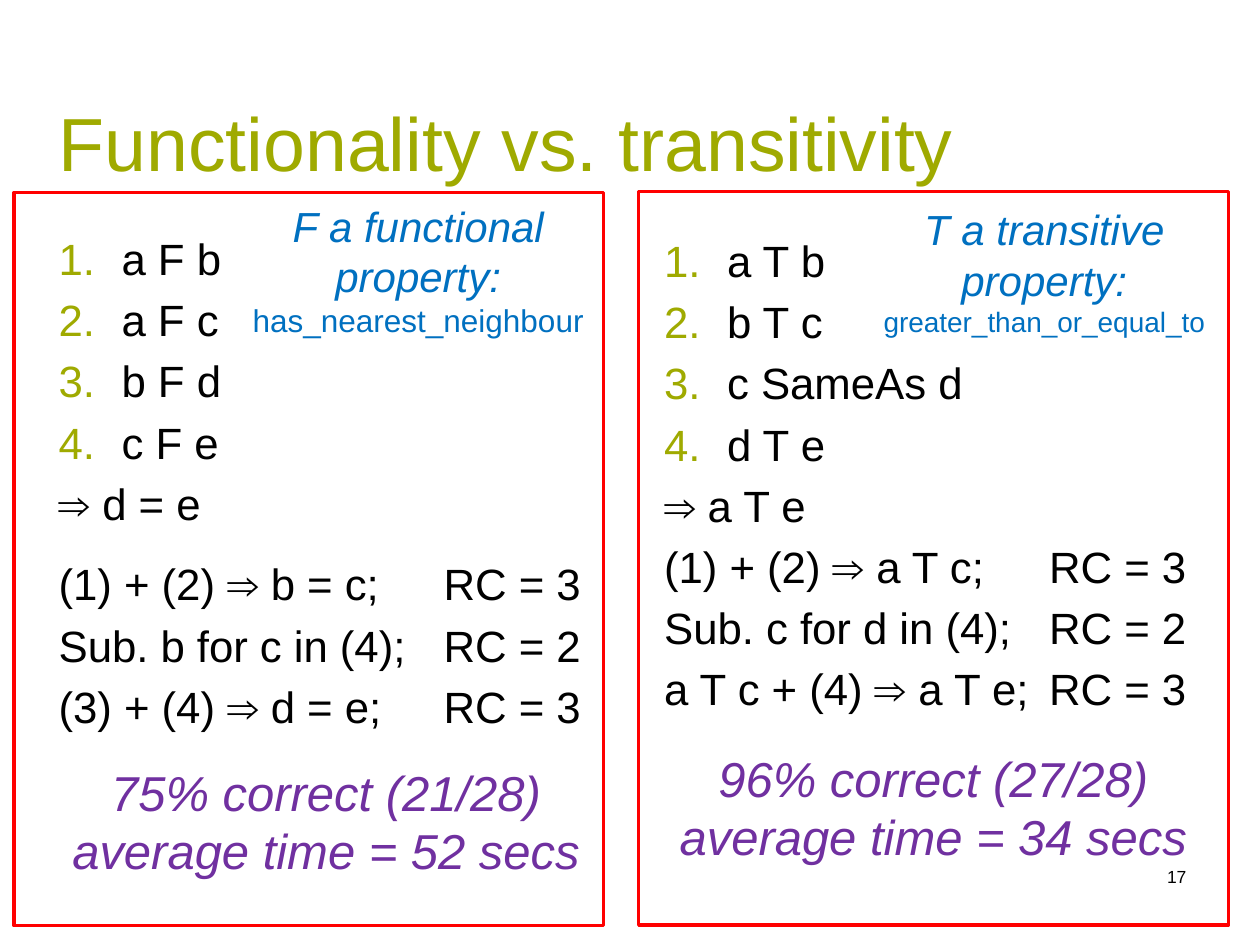
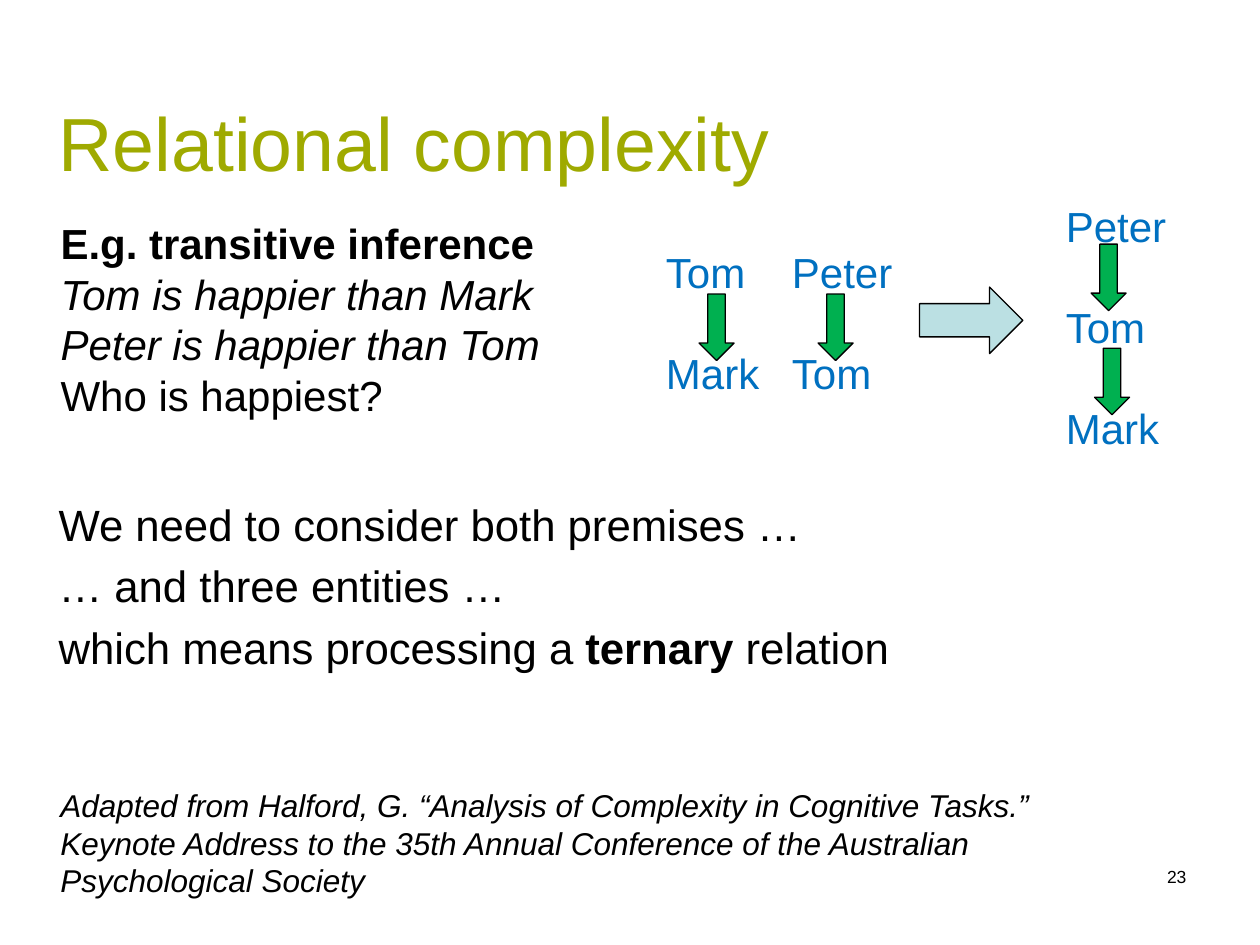
from lxml.etree import SubElement
from pptx import Presentation
from pptx.dml.color import RGBColor
from pptx.enum.shapes import MSO_SHAPE
from pptx.enum.text import MSO_ANCHOR, MSO_AUTO_SIZE, PP_ALIGN
from pptx.oxml.ns import qn
from pptx.util import Pt

# Shared style
FACE = "Arial"
OLIVE, BLACK, BLUE = "9FAA00", "000000", "0070C0"
PURPLE, RED, GREEN, PALE = "7030A0", "FF0000", "00B050", "BBE0E3"
LEADING = 1.2
TIGHT, LOOSE = (6, 3), (7.2, 3.6)  # side and top insets
LEFT = 27.5


def paint(code):
    return RGBColor.from_string(code)


class Deck:
    def __init__(self):
        self.prs = Presentation()
        self.prs.slide_width, self.prs.slide_height = Pt(720), Pt(540)
        self.slide = None

    def page(self, title, number):
        """Start a slide with its title and page number."""
        self.slide = self.prs.slides.add_slide(self.prs.slide_layouts[5])
        head = self.slide.shapes.title
        head.left, head.top, head.width, head.height = map(Pt, (LEFT, 52, 574.5, 57.5))
        self.frame(head.text_frame, TIGHT, MSO_ANCHOR.MIDDLE)
        head.text_frame.text = title
        self.style(head.text_frame.paragraphs[0], 43, OLIVE)
        self.text((515.5, 492, 168.5, 37.5), [number], 10, inset=TIGHT,
                  align=PP_ALIGN.RIGHT)

    def frame(self, frame, inset, anchor=MSO_ANCHOR.TOP):
        frame.word_wrap = True
        frame.auto_size = MSO_AUTO_SIZE.NONE
        frame.vertical_anchor = anchor
        frame.margin_left = frame.margin_right = Pt(inset[0])
        frame.margin_top = frame.margin_bottom = Pt(inset[1])

    def style(self, para, size, color=BLACK, bold=False, italic=False,
              align=PP_ALIGN.LEFT, before=0):
        para.alignment = align
        para.line_spacing = Pt(round(size * LEADING, 2))
        para.space_before = Pt(before)
        font = para.font
        font.name, font.size, font.bold, font.italic = FACE, Pt(size), bold, italic
        font.color.rgb = paint(color)

    def text(self, box, lines, size, inset=LOOSE, gap=0, tab=None, **look):
        """Each line is a string, or a pair of string and its own style.

        A string split by "**" has its odd parts in bold.
        """
        frame = self.slide.shapes.add_textbox(*map(Pt, box)).text_frame
        self.frame(frame, inset)
        for i, line in enumerate(lines):
            words, own = line if isinstance(line, tuple) else (line, {})
            para = frame.paragraphs[0] if i == 0 else frame.add_paragraph()
            for j, part in enumerate(words.split("**")):
                run = para.add_run()
                run.text = part
                if j % 2:
                    run.font.bold = True
            own = {"size": size, "before": gap if i else 0, **look, **own}
            if own.pop("count", False):
                self.count(para)
            if tab and "\t" in words:
                stops = SubElement(para._p.get_or_add_pPr(), qn("a:tabLst"))
                SubElement(stops, qn("a:tab"), pos=str(Pt(tab)), algn="l")
            self.style(para, **own)

    def count(self, para):
        """Number a paragraph in olive with a hanging indent."""
        props = para._p.get_or_add_pPr()
        props.set("marL", str(Pt(36)))
        props.set("indent", str(-Pt(36)))
        tint = SubElement(props, qn("a:buClr"))
        SubElement(tint, qn("a:srgbClr"), val=OLIVE)
        SubElement(props, qn("a:buFont"), typeface=FACE)
        SubElement(props, qn("a:buAutoNum"), type="arabicPeriod")

    def shape(self, kind, box, fill=None, line=BLACK, width=0.75):
        item = self.slide.shapes.add_shape(kind, *map(Pt, box))
        item.shadow.inherit = False
        if fill:
            item.fill.solid()
            item.fill.fore_color.rgb = paint(fill)
        else:
            item.fill.background()
        item.line.color.rgb = paint(line)
        item.line.width = Pt(width)

    def panel(self, frame, proof, facts, steps, score, result, note, kind):
        """Framed proof with its property and its score."""
        lines = [(fact, {"count": True}) for fact in facts] + steps
        self.text(proof, lines, 25, inset=TIGHT, gap=5, tab=220)
        self.text(score, result, 28, color=PURPLE, italic=True, align=PP_ALIGN.CENTER)
        self.shape(MSO_SHAPE.RECTANGLE, frame, line=RED, width=2)
        self.text(note, kind, 24, color=BLUE, italic=True, align=PP_ALIGN.CENTER)


def compare(deck):
    deck.page("Functionality vs. transitivity", "17")
    # Functional property
    deck.panel(
        (8, 110, 337, 419), (LEFT, 129.5, 317.5, 302),
        ["a F b", "a F c", "b F d", "c F e"],
        ["⇒ d = e",
         ("(1) + (2) ⇒ b = c; \tRC = 3", {"before": 16}),
         "Sub. b for c in (4); \tRC = 2",
         "(3) + (4) ⇒ d = e;\tRC = 3"],
        (LEFT, 432, 317.5, 75),
        ["75% correct (21/28)", "average time = 52 secs"],
        (132.5, 111, 213, 87),
        ["F a functional property:",
         ("has_nearest_neighbour", {"size": 18, "italic": False})])
    # Transitive property
    deck.panel(
        (365, 109.5, 337, 419), (373.5, 130.5, 317.5, 290),
        ["a T b", "b T c", "c SameAs d", "d T e"],
        ["⇒ a T e",
         "(1) + (2) ⇒ a T c;\tRC = 3",
         "Sub. c for d in (4);\tRC = 2",
         "a T c + (4) ⇒ a T e;\tRC = 3"],
        (374.5, 424, 317.5, 75),
        ["96% correct (27/28)", "average time = 34 secs"],
        (496.5, 113, 200.5, 85),
        ["T a transitive property:",
         ("greater_than_or_equal_to", {"size": 16, "italic": False})])


def explain(deck):
    deck.page("Relational complexity", "23")
    # Example and its outcome
    deck.text((LEFT, 121, 295, 124),
              [("E.g. transitive inference", {"bold": True}),
               ("Tom is happier than Mark", {"italic": True}),
               ("Peter is happier than Tom", {"italic": True}),
               "Who is happiest?"], 24)
    deck.text((LEFT, 281.5, 662.5, 109),
              ["We need to consider both premises …",
               "… and three entities …",
               "which means processing a **ternary** relation"],
              25, inset=TIGHT, gap=5)
    # Premises and the merged order, one empty row apart
    row = 24 * LEADING
    deck.text((373.5, 137.5, 152, 94), ["Tom\tPeter", "Mark\tTom"], 24,
              gap=row, tab=72, color=BLUE)
    deck.text((602, 111, 88, 152.5), ["Peter", "Tom", "Mark"], 24,
              gap=row, color=BLUE)
    deck.shape(MSO_SHAPE.RIGHT_ARROW, (525.5, 164, 59, 38), PALE)
    for x, y in ((399.5, 168), (467.5, 168), (625.5, 199), (623.5, 139.5)):
        deck.shape(MSO_SHAPE.DOWN_ARROW, (x, y, 20, 38), GREEN)
    # Reference
    deck.text((LEFT, 445.5, 600.5, 73),
              ["Adapted from Halford, G. “Analysis of Complexity in Cognitive Tasks.” "
               "Keynote Address to the 35th Annual Conference of the Australian "
               "Psychological Society"], 18, italic=True)


def main():
    deck = Deck()
    compare(deck)
    explain(deck)
    deck.prs.save("out.pptx")


if __name__ == "__main__":
    main()
